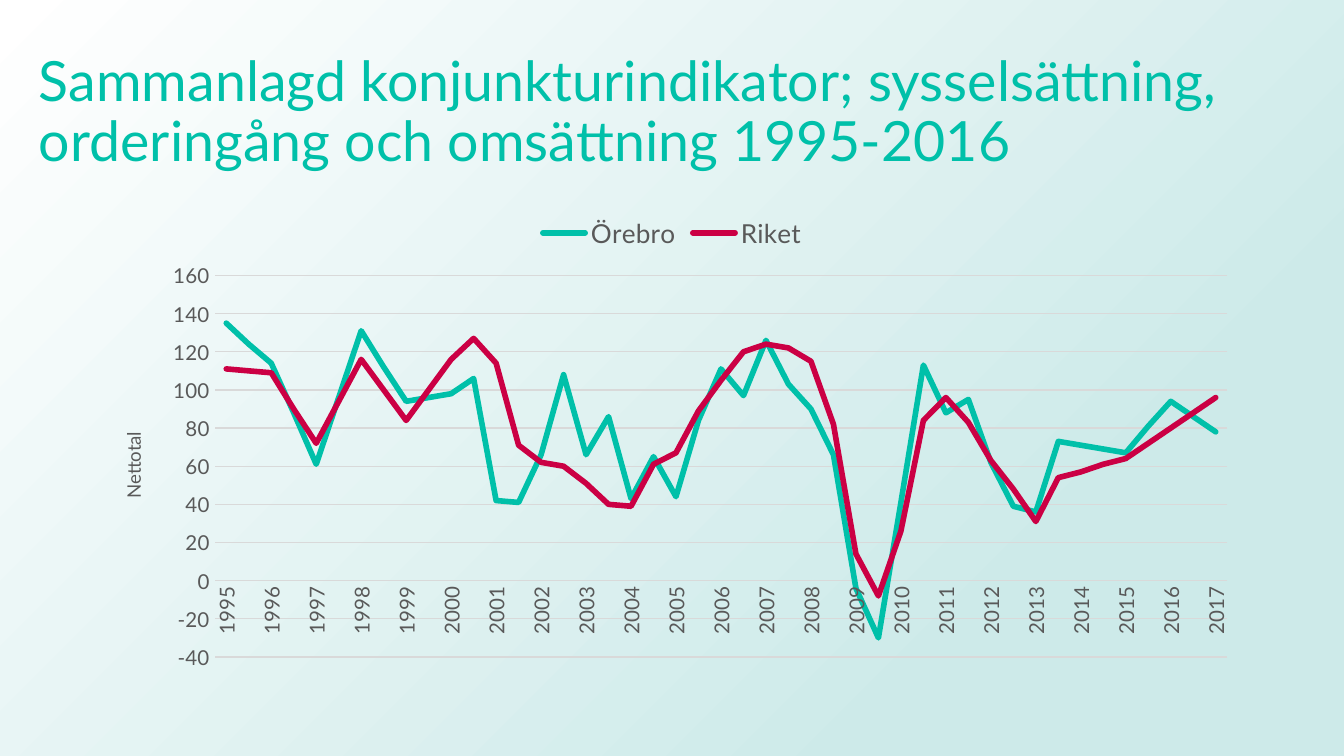
from dataclasses import dataclass

from pptx import Presentation
from pptx.chart.data import CategoryChartData
from pptx.dml.color import RGBColor
from pptx.enum import chart as ch, shapes, text
from pptx.oxml import parse_xml
from pptx.oxml.ns import nsdecls
from pptx.util import Inches, Pt


@dataclass(frozen=True)
class Theme:
    font: str = "Lato"
    teal: str = "00C0A9"
    crimson: str = "CB0044"
    label: str = "595959"
    grid: str = "D9D9D9"
    mist: str = "CDEAE9"
    white: str = "FFFFFF"
    title_size: float = 29.7
    legend_size: float = 14
    tick_size: float = 11
    axis_title_size: float = 10


THEME = Theme()
SLIDE_W = 10
SLIDE_H = SLIDE_W * 9 / 16
TITLE = "Sammanlagd konjunkturindikator; sysselsättning, orderingång och omsättning 1995-2016"

# Two readings per year, and a single one for the last year
HALF_YEARS = [str(1995 + half // 2) for half in range(45)]
OREBRO = [135, 124, 114, 88, 61, 96, 131, 112, 94, 96, 98, 106, 42, 41, 66,
          108, 66, 86, 43, 65, 44, 84, 111, 97, 126, 103, 90, 66, -4, -30,
          41, 113, 88, 95, 62, 39, 36, 73, 71, 69, 67, 81, 94, 86, 78]
RIKET = [111, 110, 109, 90, 72, 94, 116, 100, 84, 100, 116, 127, 114, 71, 62,
         60, 51, 40, 39, 61, 67, 89, 105, 120, 124, 122, 115, 82, 14, -8,
         26, 84, 96, 83, 63, 48, 31, 54, 57, 61, 64, 72, 80, 88, 96]
SERIES = [("Örebro", OREBRO, THEME.teal), ("Riket", RIKET, THEME.crimson)]


def style_font(font, size, color):
    font.name = THEME.font
    font.size = Pt(size)
    font.bold = False
    font.color.rgb = RGBColor.from_string(color)


def style_line(line, color, width):
    line.color.rgb = RGBColor.from_string(color)
    line.width = Pt(width)


def turn_upright(body):
    body.set("rot", "-5400000")
    body.set("vert", "horz")


def set_layout(parent, index, inner=False, **fractions):
    """Place a chart part by fractions of the chart's width and height."""
    for old in parent.xpath("./c:layout"):
        parent.remove(old)
    target = '<c:layoutTarget val="inner"/>' if inner else ""
    modes = "".join(f'<c:{key}Mode val="edge"/>' for key in "xy")
    values = "".join(f'<c:{key} val="{value}"/>' for key, value in fractions.items())
    parent.insert(index, parse_xml(
        f'<c:layout {nsdecls("c")}><c:manualLayout>{target}{modes}{values}'
        "</c:manualLayout></c:layout>"))


def add_backdrop(slide, left, top, width, height):
    backdrop = slide.shapes.add_shape(
        shapes.MSO_SHAPE.RECTANGLE,
        Inches(left), Inches(top), Inches(width), Inches(height))
    backdrop.shadow.inherit = False
    backdrop.line.fill.background()
    backdrop.fill.gradient()
    gradient = backdrop.element.xpath("./p:spPr/a:gradFill")[0]
    stops = "".join(
        f'<a:gs pos="{percent * 1000}"><a:srgbClr val="{color}"/></a:gs>'
        for percent, color in ((23, THEME.mist), (100, THEME.white)))
    gradient.getparent().replace(gradient, parse_xml(
        f'<a:gradFill {nsdecls("a")} rotWithShape="1"><a:gsLst>{stops}</a:gsLst>'
        '<a:path path="circle"><a:fillToRect l="100000" t="100000"/></a:path>'
        "</a:gradFill>"))
    slide.shapes.element.insert(2, backdrop.element)  # behind everything


def place_title(slide, left, top, width, height):
    title = slide.shapes.title
    title.left, title.top = Inches(left), Inches(top)
    title.width, title.height = Inches(width), Inches(height)
    frame = title.text_frame
    frame.word_wrap = True
    frame.auto_size = text.MSO_AUTO_SIZE.NONE
    frame.vertical_anchor = text.MSO_ANCHOR.MIDDLE
    paragraph = frame.paragraphs[0]
    paragraph.alignment = text.PP_ALIGN.LEFT
    paragraph.line_spacing = 0.9
    run = paragraph.add_run()
    run.text = TITLE
    style_font(run.font, THEME.title_size, THEME.teal)


def style_year_axis(chart):
    years = chart.category_axis
    years.major_tick_mark = ch.XL_TICK_MARK.NONE
    style_font(years.tick_labels.font, THEME.tick_size, THEME.label)
    style_line(years.format.line, THEME.grid, 0.75)
    axis = chart.element.xpath(".//c:catAx")[0]
    turn_upright(axis.xpath("./c:txPr/a:bodyPr")[0])
    axis.xpath("./c:noMultiLvlLbl")[0].addprevious(
        parse_xml(f'<c:tickLblSkip {nsdecls("c")} val="2"/>'))


def style_total_axis(chart):
    totals = chart.value_axis
    totals.minimum_scale, totals.maximum_scale, totals.major_unit = -40, 160, 20
    totals.major_tick_mark = ch.XL_TICK_MARK.NONE
    totals.tick_labels.number_format = "0"
    totals.tick_labels.number_format_is_linked = False
    style_font(totals.tick_labels.font, THEME.tick_size, THEME.label)
    totals.format.line.fill.background()
    style_line(totals.major_gridlines.format.line, THEME.grid, 0.75)

    run = totals.axis_title.text_frame.paragraphs[0].add_run()
    run.text = "Nettotal"
    style_font(run.font, THEME.axis_title_size, THEME.label)
    turn_upright(chart.element.xpath(".//c:valAx/c:title//a:bodyPr")[0])


def add_indicator_chart(slide, left, top, width, height):
    data = CategoryChartData(number_format="0")
    data.categories = HALF_YEARS
    for name, values, _ in SERIES:
        data.add_series(name, values)
    chart = slide.shapes.add_chart(
        ch.XL_CHART_TYPE.LINE, Inches(left), Inches(top),
        Inches(width), Inches(height), data).chart
    style_font(chart.font, THEME.tick_size, THEME.label)
    chart.has_title = False
    chart.has_legend = True
    chart.legend.position = ch.XL_LEGEND_POSITION.TOP
    chart.legend.include_in_layout = False
    style_font(chart.legend.font, THEME.legend_size, THEME.label)

    chart.plots[0].vary_by_categories = False
    for region, (_, _, color) in zip(chart.plots[0].series, SERIES):
        region.smooth = False
        region.marker.style = ch.XL_MARKER_STYLE.NONE
        style_line(region.format.line, color, 3)
    for stroke in chart.element.xpath(".//c:ser/c:spPr/a:ln"):
        stroke.set("cap", "rnd")

    style_year_axis(chart)
    style_total_axis(chart)
    axis_title = chart.element.xpath(".//c:valAx/c:title")[0]
    set_layout(axis_title, 1, x=0.18 / width, y=1.69 / height)
    plot_area = chart.element.xpath(".//c:plotArea")[0]
    set_layout(plot_area, 0, inner=True, x=0.91 / width, y=0.55 / height,
               w=7.53 / width, h=2.84 / height)


def main():
    deck = Presentation()
    deck.slide_width, deck.slide_height = Inches(SLIDE_W), Inches(SLIDE_H)
    title_only = deck.slide_layouts[5]
    slide = deck.slides.add_slide(title_only)
    add_backdrop(slide, 0, 0, SLIDE_W, SLIDE_H)
    place_title(slide, 0.19, 0.3, 10.02, 1.09)
    add_indicator_chart(slide, 0.69, 1.5, 8.62, 3.56)
    deck.save("out.pptx")


if __name__ == "__main__":
    main()
